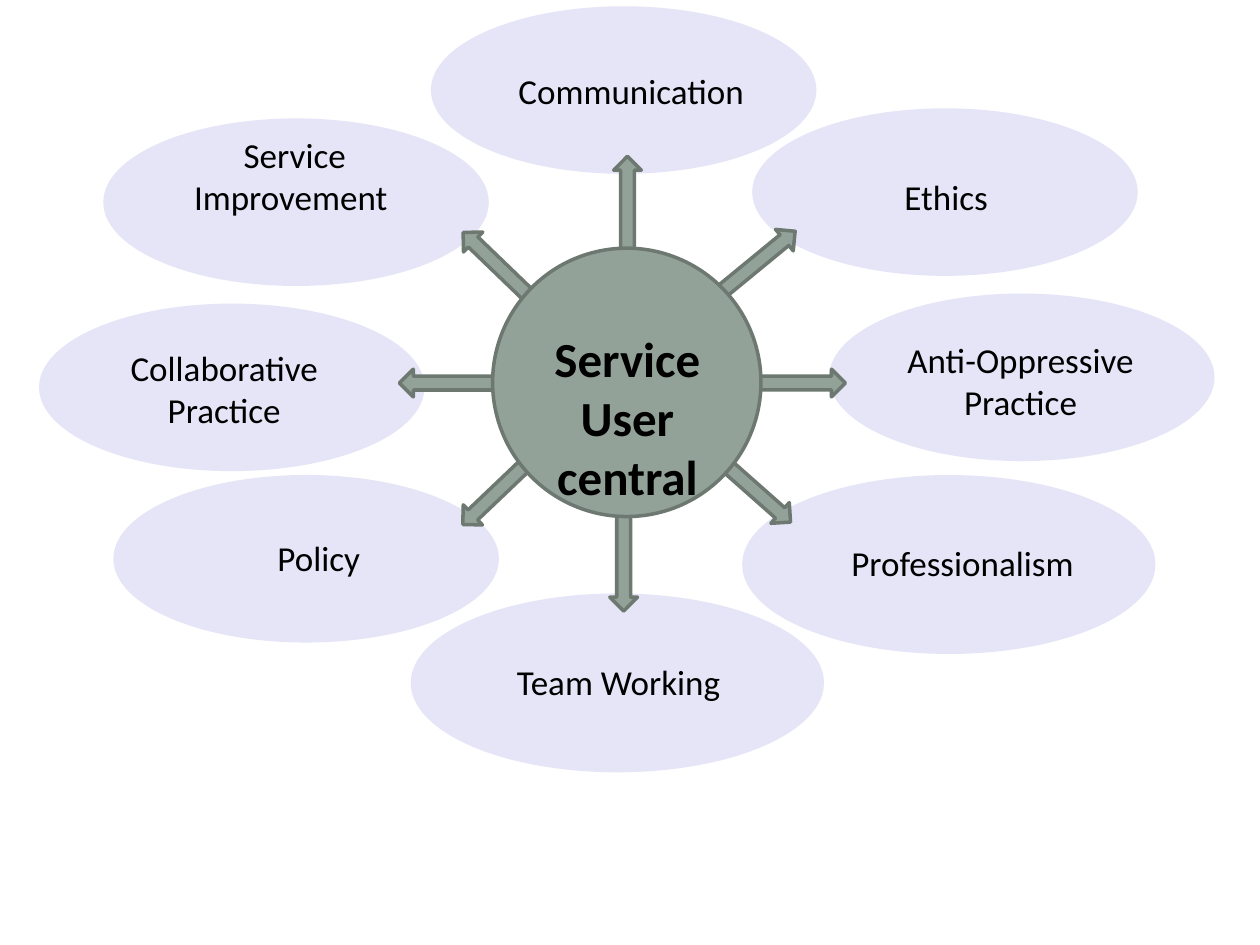
import pptx
import pptx.dml.color
import pptx.enum.shapes
import pptx.enum.text
import pptx.util

COLORS = {"petal": "E5E5F7", "hub": "93A299", "edge": "6D7871", "text": "000000"}
FONT = "Calibri"
SMALL, LARGE = (3.06, 1.33), (3.28, 1.42)
ARROW = (1.4, 0.22)
LABEL_WIDTH = 2.06

# label, ellipse corner, ellipse size, label corner, label height
THEMES = [
    ("Collaborative Practice", (0.31, 2.41), SMALL, (0.75, 2.7), 0.72),
    ("Team Working", (3.26, 4.71), LARGE, (3.88, 5.19), 0.41),
    ("Professionalism", (5.89, 3.77), LARGE, (6.61, 4.25), 0.44),
    ("Policy", (0.9, 3.77), SMALL, (1.5, 4.21), 0.41),
    ("Anti-Oppressive Practice", (6.58, 2.33), SMALL, (7.07, 2.64), 0.72),
    ("Ethics", (5.97, 0.86), SMALL, (6.48, 1.34), 0.41),
    ("Communication", (3.42, 0.05), SMALL, (3.98, 0.5), 0.41),
    ("Service Improvement ", (0.82, 0.94), SMALL, (1.31, 1.01), 0.77),
]

# arrow corner before turning, clockwise angle
ARROWS = [
    ((4.25, 4.04), 90),
    ((5.05, 3.57), 41.5),
    ((3.48, 3.57), 136.4),
    ((5.31, 2.93), 0),
    ((3.17, 2.93), 180),
    ((4.28, 1.83), 270),
    ((3.48, 2.22), 223.9),
    ((5.07, 2.17), 320.6),
]


def rgb(name):
    return pptx.dml.color.RGBColor.from_string(COLORS[name])


def box(corner, size):
    return [pptx.util.Inches(v) for v in (*corner, *size)]


def add_filled(s, kind, corner, size, fill, edge=None, angle=0):
    sp = s.shapes.add_shape(kind, *box(corner, size))
    sp.shadow.inherit = False
    sp.rotation = angle
    sp.fill.solid()
    sp.fill.fore_color.rgb = rgb(fill)
    if edge:
        sp.line.color.rgb = rgb(edge)
        sp.line.width = pptx.util.Pt(2)
    else:
        sp.line.fill.background()


def add_label(s, text, corner, size, points=20, bold=False):
    tf = s.shapes.add_textbox(*box(corner, size)).text_frame
    tf.word_wrap = True
    tf.text = text
    p = tf.paragraphs[0]
    p.alignment = pptx.enum.text.PP_ALIGN.CENTER
    font = p.runs[0].font
    font.name = FONT
    font.size = pptx.util.Pt(points)
    font.bold = bold
    font.color.rgb = rgb("text")


def main():
    prs = pptx.Presentation()
    prs.slide_width = pptx.util.Inches(10)
    prs.slide_height = pptx.util.Inches(7.5)
    s = prs.slides.add_slide(prs.slide_layouts[6])
    kinds = pptx.enum.shapes.MSO_SHAPE

    for _, corner, size, _, _ in THEMES:
        add_filled(s, kinds.OVAL, corner, size, "petal")
    for corner, angle in ARROWS:
        add_filled(s, kinds.RIGHT_ARROW, corner, ARROW, "hub", "edge", angle)
    add_filled(s, kinds.OVAL, (3.91, 1.97), (2.13, 2.13), "hub", "edge")

    add_label(s, "Service User central", (4.06, 2.56), (1.84, 1.51), 28, True)
    for text, _, _, corner, height in THEMES:
        add_label(s, text, corner, (LABEL_WIDTH, height))

    prs.save("out.pptx")


if __name__ == "__main__":
    main()
